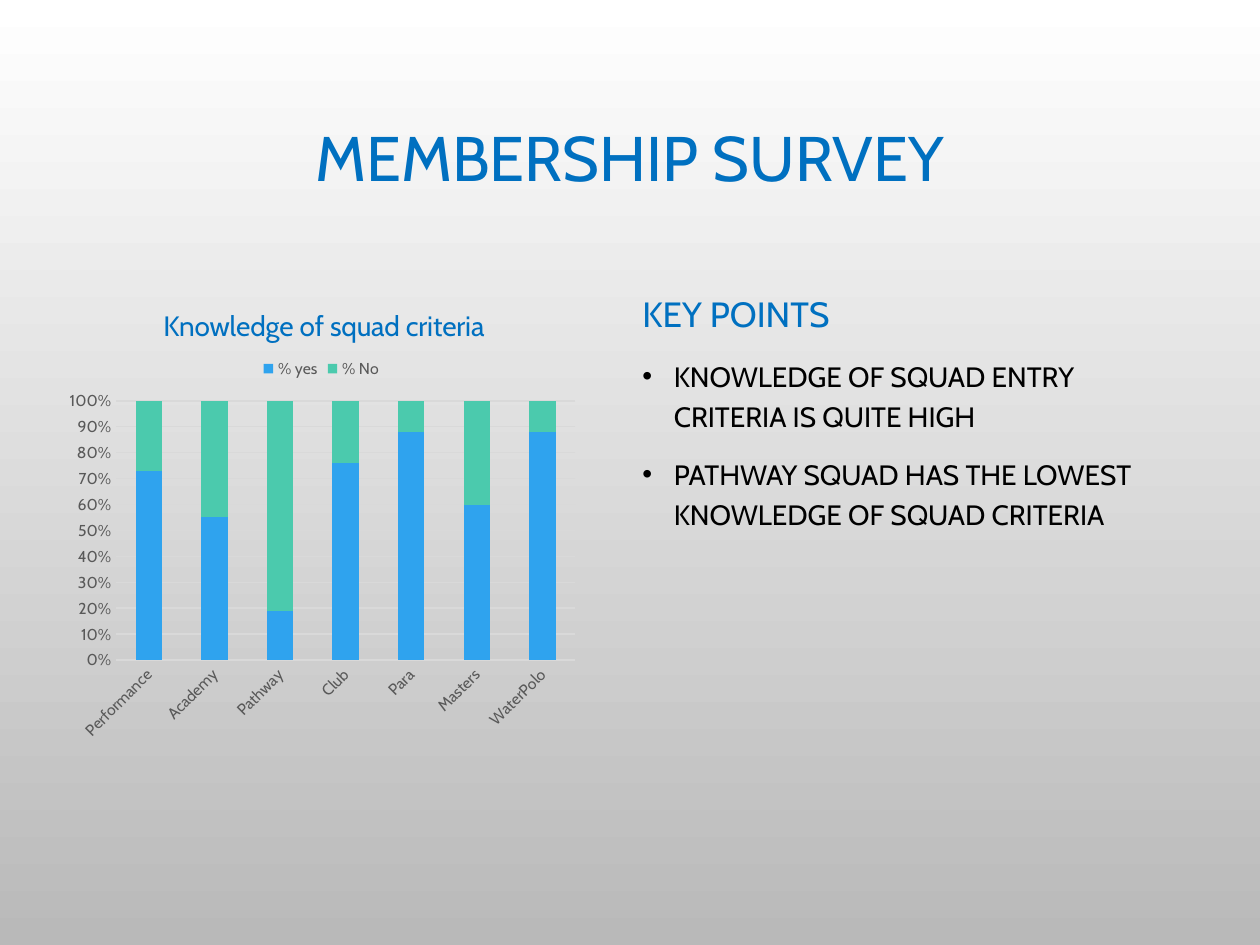
"""Build the membership survey slide with a stacked chart and its key points."""
from dataclasses import dataclass

from lxml import etree
from pptx import Presentation
from pptx.chart.data import CategoryChartData
from pptx.dml.color import RGBColor
from pptx.enum.chart import XL_CHART_TYPE as ChartType
from pptx.enum.chart import XL_LEGEND_POSITION as LegendPosition
from pptx.enum.chart import XL_TICK_MARK as TickMark
from pptx.enum.text import MSO_ANCHOR as Anchor
from pptx.enum.text import PP_ALIGN as Align
from pptx.oxml.ns import qn
from pptx.util import Inches, Pt


@dataclass(frozen=True)
class Theme:
    font: str = "Cabin"
    blue: str = "0070C0"
    black: str = "000000"
    gray: str = "595959"
    grid: str = "D9D9D9"
    yes: str = "2FA3EE"
    no: str = "4BCAAD"
    background: tuple = ("FFFFFF", "B9B9B9")
    title_size: int = 36
    heading_size: int = 20
    body_size: int = 16
    chart_size: int = 9


theme = Theme()


def style_font(font, size, color):
    font.name = theme.font
    font.size = Pt(size)
    font.bold = False
    font.color.rgb = RGBColor.from_string(color)


def write_text(paragraph, text, size=theme.body_size, color=theme.black,
               align=Align.LEFT, line_spacing=1.2, space_before=0, bullet=False):
    paragraph.alignment = align
    paragraph.line_spacing = line_spacing
    paragraph.space_before = Pt(space_before)
    if bullet:
        properties = paragraph._p.get_or_add_pPr()
        properties.set("marL", str(Inches(0.25)))
        properties.set("indent", str(Inches(-0.25)))
        etree.SubElement(properties, qn("a:buFont"), typeface="Arial")
        etree.SubElement(properties, qn("a:buChar"), char="•")
    run = paragraph.add_run()
    run.text = text
    style_font(run.font, size, color)


presentation = Presentation()
presentation.slide_width = Inches(10)
presentation.slide_height = Inches(7.5)
slide = presentation.slides.add_slide(presentation.slide_layouts[5])

background = slide.background.fill
background.gradient()
background.gradient_angle = 270
for stop, color in zip(background.gradient_stops, theme.background):
    stop.color.rgb = RGBColor.from_string(color)

title = slide.shapes.title
title.left, title.top = Inches(0.75), Inches(0.68)
title.width, title.height = Inches(8.5), Inches(1.75)
title.text_frame.vertical_anchor = Anchor.MIDDLE
title.text_frame.margin_bottom = Inches(0.6)
write_text(title.text_frame.paragraphs[0], "MEMBERSHIP SURVEY", size=theme.title_size,
           color=theme.blue, align=Align.CENTER, line_spacing=0.9)

key_points = slide.shapes.add_textbox(Inches(5), Inches(2.21), Inches(4.19), Inches(3.74))
frame = key_points.text_frame
frame.word_wrap = True
write_text(frame.paragraphs[0], "KEY POINTS", size=theme.heading_size, color=theme.blue)
for point in (
    "KNOWLEDGE OF SQUAD ENTRY CRITERIA IS QUITE HIGH",
    "PATHWAY SQUAD HAS THE LOWEST KNOWLEDGE OF SQUAD CRITERIA",
):
    write_text(frame.add_paragraph(), point, space_before=10, bullet=True)

yes_values = (73, 55, 19, 76, 88, 60, 88)
chart_data = CategoryChartData()
chart_data.categories = ["Performance", "Academy", "Pathway", "Club", "Para", "Masters", "WaterPolo"]
chart_data.add_series("% yes", yes_values)
chart_data.add_series("% No", [100 - value for value in yes_values])
chart = slide.shapes.add_chart(ChartType.COLUMN_STACKED_100, Inches(0.46), Inches(2.21),
                               Inches(4.19), Inches(3.74), chart_data).chart
style_font(chart.font, theme.chart_size, theme.gray)

chart.has_title = True
write_text(chart.chart_title.text_frame.paragraphs[0], "Knowledge of squad criteria",
           color=theme.blue, align=Align.CENTER, line_spacing=1)
chart.chart_title.include_in_layout = False
chart.has_legend = True
chart.legend.position = LegendPosition.TOP
chart.legend.include_in_layout = False
style_font(chart.legend.font, theme.chart_size, theme.gray)

plot = chart.plots[0]
plot.gap_width = 150
plot.overlap = 100
plot.vary_by_categories = False
for series, color in zip(plot.series, (theme.yes, theme.no)):
    series.format.fill.solid()
    series.format.fill.fore_color.rgb = RGBColor.from_string(color)

for axis in (chart.category_axis, chart.value_axis):
    axis.major_tick_mark = TickMark.NONE
    axis.minor_tick_mark = TickMark.NONE
    style_font(axis.tick_labels.font, theme.chart_size, theme.gray)
chart.category_axis._element.txPr.find(qn("a:bodyPr")).set("rot", "-2700000")
chart.value_axis.format.line.fill.background()
chart.value_axis.major_unit = 0.1
chart.value_axis.tick_labels.number_format = "0%"
chart.value_axis.tick_labels.number_format_is_linked = False
for line in (chart.category_axis.format.line, chart.value_axis.major_gridlines.format.line):
    line.color.rgb = RGBColor.from_string(theme.grid)
    line.width = Pt(0.75)

plot_area = chart._chartSpace.chart.plotArea
for old_layout in plot_area.findall(qn("c:layout")):
    plot_area.remove(old_layout)
title_element = chart.chart_title._element
for old_layout in title_element.findall(qn("c:layout")):
    title_element.remove(old_layout)
layouts = (
    (plot_area, 0, {"layoutTarget": "inner", "xMode": "edge", "yMode": "edge",
                    "x": 0.11, "y": 0.26, "w": 0.87, "h": 0.55}),
    (title_element, 1, {"xMode": "edge", "yMode": "edge", "x": 0.19, "y": 0.05}),
    (chart.legend._element, 1, {"xMode": "edge", "yMode": "edge", "x": 0.38, "y": 0.16}),
)
for parent, position, settings in layouts:
    layout = etree.Element(qn("c:layout"))
    manual = etree.SubElement(layout, qn("c:manualLayout"))
    for name, value in settings.items():
        etree.SubElement(manual, qn(f"c:{name}"), val=str(value))
    parent.insert(position, layout)

presentation.save("out.pptx")
